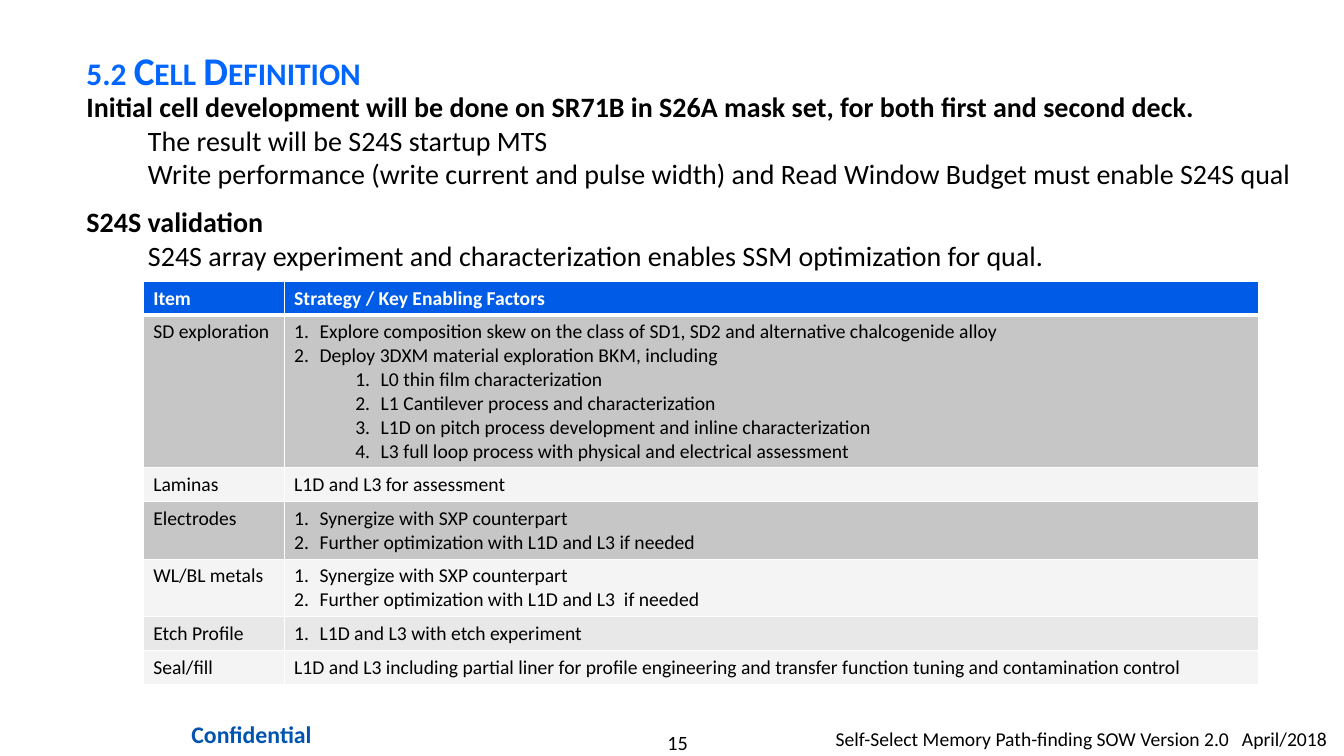
import pptx
import pptx.dml.color
import pptx.enum.text
import pptx.oxml
import pptx.oxml.ns
import pptx.util

Cm = pptx.util.Cm
Pt = pptx.util.Pt
ALIGN = pptx.enum.text.PP_ALIGN
ANCHOR = pptx.enum.text.MSO_ANCHOR

COLORS = {
    "title": "0066FF", "text": "000000", "confidential": "0054B0",
    "header": "005CE7", "header_text": "FFFFFF", "border": "FFFFFF",
    "dark": "C6C6C6", "mid": "E8E8E8", "light": "F4F4F4",
}
FONT = "Calibri"

TITLE = "5.2 Cell Definition"
BODY = [
    ("Initial cell development will be done on SR71B in S26A mask set, for both first and second deck.",
     ["The result will be S24S startup MTS",
      "Write performance (write current and pulse width) and Read Window Budget must enable S24S qual"]),
    ("S24S validation",
     ["S24S array experiment and characterization enables SSM optimization for qual."]),
]
HEADER = ("Item", "Strategy / Key Enabling Factors")
# Item, row colour, factors as (list level, text); level None is unnumbered
ROWS = [
    ("SD exploration", "dark", [
        (0, "Explore composition skew on the class of SD1, SD2 and alternative chalcogenide alloy"),
        (0, "Deploy 3DXM material exploration BKM, including"),
        (1, "L0 thin film characterization"),
        (1, "L1 Cantilever process and characterization"),
        (1, "L1D on pitch process development and inline characterization"),
        (1, "L3 full loop process with physical and electrical assessment")]),
    ("Laminas", "light", [(None, "L1D and L3 for assessment")]),
    ("Electrodes", "dark", [
        (0, "Synergize with SXP counterpart"),
        (0, "Further optimization with L1D and L3 if needed")]),
    ("WL/BL metals", "light", [
        (0, "Synergize with SXP counterpart"),
        (0, "Further optimization with L1D and L3  if needed")]),
    ("Etch Profile", "mid", [(0, "L1D and L3 with etch experiment")]),
    ("Seal/fill", "light", [
        (None, "L1D and L3 including partial liner for profile engineering "
               "and transfer function tuning and contamination control")]),
]
PAGE_NUMBER = "15"
CONFIDENTIAL = "Confidential"
VERSION = "Self-Select Memory Path-finding SOW Version 2.0\tApril/2018"

COL_WIDTHS = (3.55, 24.55)
CELL_PADDING, LINE_HEIGHT = 0.25, 0.6
NUMBER_HANG = 0.64
SUBLIST_INDENT = 2.18
BODY_INDENT = 1.55
DATE_TAB = 10.24


def rgb(name):
    return pptx.dml.color.RGBColor.from_string(COLORS[name])


def add_run(p, text, size, color="text", bold=False):
    r = p.add_run()
    r.text = text
    for key, value in {"name": FONT, "size": Pt(size), "bold": bold}.items():
        setattr(r.font, key, value)
    r.font.color.rgb = rgb(color)
    return r


def add_box(slide, left, top, width, height, pad_x=0.25, pad_y=0.13, anchor=ANCHOR.TOP):
    """Add a wrapping text box, measured in cm, and return its text frame."""
    sp = slide.shapes.add_textbox(Cm(left), Cm(top), Cm(width), Cm(height))
    tf = sp.text_frame
    settings = {
        "word_wrap": True, "vertical_anchor": anchor,
        "margin_left": Cm(pad_x), "margin_right": Cm(pad_x),
        "margin_top": Cm(pad_y), "margin_bottom": Cm(pad_y),
    }
    for key, value in settings.items():
        setattr(tf, key, value)
    return tf


def next_paragraph(tf, index):
    return tf.paragraphs[0] if index == 0 else tf.add_paragraph()


def sub_element(parent, tag, **attributes):
    child = pptx.oxml.ns.qn(tag)
    element = parent.makeelement(child, attributes)
    parent.append(element)
    return element


def number_paragraph(p, level):
    p.level = level
    pPr = p._p.get_or_add_pPr()
    pPr.set("marL", str(Cm(SUBLIST_INDENT if level else NUMBER_HANG)))
    pPr.set("indent", str(-Cm(NUMBER_HANG)))
    sub_element(pPr, "a:buFont", typeface="+mj-lt")
    sub_element(pPr, "a:buAutoNum", type="arabicPeriod")


def style_cell(cell, fill, bottom_width=1):
    """Draw the white cell borders, then the fill."""
    tcPr = cell._tc.get_or_add_tcPr()
    for side, width in {"L": 1, "R": 1, "T": 1, "B": bottom_width}.items():
        ln = sub_element(tcPr, "a:ln" + side, w=str(Pt(width)))
        sub_element(sub_element(ln, "a:solidFill"), "a:srgbClr", val=COLORS["border"])
    cell.fill.solid()
    cell.fill.fore_color.rgb = rgb(fill)


def add_heading(slide):
    tf = add_box(slide, 1.93, 0.53, 28.09, 2.34, anchor=ANCHOR.MIDDLE)
    p = tf.paragraphs[0]
    p.line_spacing = 1.1
    r = add_run(p, TITLE, 28, "title", True)
    r.font._element.set("cap", "small")


def add_body(slide):
    tf = add_box(slide, 1.93, 2.13, 31.19, 4.98)
    for i, (heading, details) in enumerate(BODY):
        p = next_paragraph(tf, i)
        if i:
            p.space_before = Pt(10)
        add_run(p, heading, 20, bold=True)
        for detail in details:
            p = tf.add_paragraph()
            p.level = 1
            p._p.get_or_add_pPr().set("marL", str(Cm(BODY_INDENT)))
            add_run(p, detail, 20)


def add_factor_table(slide):
    line_counts = [1] + [len(factors) for _, _, factors in ROWS]
    heights = [CELL_PADDING + LINE_HEIGHT * n for n in line_counts]
    table = slide.shapes.add_table(
        len(heights), len(COL_WIDTHS), Cm(3.61), Cm(7.09),
        Cm(sum(COL_WIDTHS)), Cm(sum(heights))).table
    for column, width in zip(table.columns, COL_WIDTHS):
        column.width = Cm(width)
    for row, height in zip(table.rows, heights):
        row.height = Cm(height)

    for c, label in enumerate(HEADER):
        cell = table.cell(0, c)
        style_cell(cell, "header", 3)
        add_run(cell.text_frame.paragraphs[0], label, 14, "header_text", True)
    for r, (item, fill, factors) in enumerate(ROWS, 1):
        for c, lines in enumerate(([(None, item)], factors)):
            cell = table.cell(r, c)
            style_cell(cell, fill)
            for i, (level, text) in enumerate(lines):
                p = next_paragraph(cell.text_frame, i)
                if level is not None:
                    number_paragraph(p, level)
                add_run(p, text, 14)


def add_footer(slide):
    p = add_box(slide, 14.12, 18.39, 5.92, 0.61, 0, 0).paragraphs[0]
    p.alignment = ALIGN.CENTER
    add_run(p, PAGE_NUMBER, 14.5)

    p = add_box(slide, 3.94, 17.98, 4.8, 1.04, 0.3, 0.15).paragraphs[0]
    p.alignment = ALIGN.CENTER
    add_run(p, CONFIDENTIAL, 17, "confidential", True)

    p = add_box(slide, 21.06, 18.19, 12.8, 0.86, 0).paragraphs[0]
    tabs = sub_element(p._p.get_or_add_pPr(), "a:tabLst")
    sub_element(tabs, "a:tab", pos=str(Cm(DATE_TAB)), algn="l")
    add_run(p, VERSION, 14)


def main():
    prs = pptx.Presentation()
    prs.slide_width, prs.slide_height = Cm(33.87), Cm(19.05)
    slide = prs.slides.add_slide(prs.slide_layouts[6])
    add_footer(slide)
    add_heading(slide)
    add_body(slide)
    add_factor_table(slide)
    prs.save("out.pptx")


if __name__ == "__main__":
    main()
